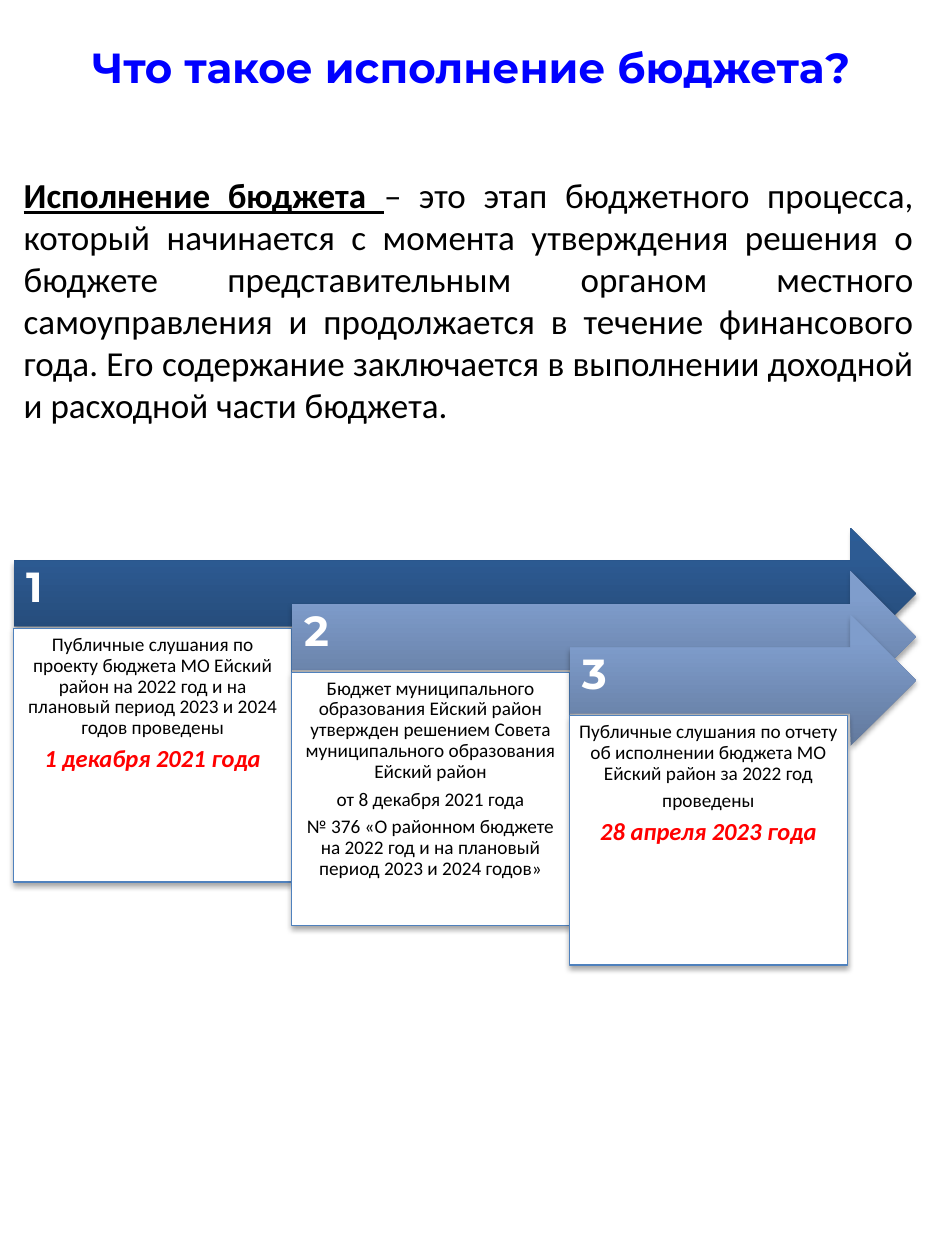
from copy import deepcopy

from pptx import Presentation
from pptx import util as u
from pptx.dml.color import RGBColor
from pptx.enum import shapes, text
from pptx.oxml import parse_xml
from pptx.oxml.ns import nsdecls, qn

HUES = {
    "title": "0000FF", "ink": "000000", "date": "FF0000",
    "white": "FFFFFF", "edge": "4F81BD",
}
DARK = ("234671", "2D5B93", "2B5C96")
PALE = ("62799D", "7F9DCC", "7E9DCE")
STEPS = [
    (DARK, 2.01, [
        ("Публичные слушания по проекту бюджета МО Ейский район на 2022 год "
         "и на плановый период 2023 и 2024 годов проведены", False),
        ("1 декабря 2021 года", True),
    ]),
    (PALE, 2.01, [
        ("Бюджет муниципального образования Ейский район утвержден решением "
         "Совета муниципального образования Ейский район", False),
        ("от 8 декабря 2021 года", False),
        ("№ 376 «О районном бюджете на 2022 год и на плановый период "
         "2023 и 2024 годов»", False),
    ]),
    (PALE, 1.98, [
        ("Публичные слушания по отчету об исполнении бюджета МО "
         "Ейский район за 2022 год", False),
        ("проведены", False),
        ("28 апреля 2023 года", True),
    ]),
]


def paint(color, hue):
    """Set a colour from a hex string."""
    color.rgb = RGBColor.from_string(hue)


def add_run(para, words, size, hue, face="Calibri", bold=False):
    """Add one styled run and return it."""
    run = para.add_run()
    run.text = words
    font = run.font
    font.name, font.size, font.bold = face, u.Pt(size), bold
    paint(font.color, hue)
    return run


def set_frame(frame, anchor, insets):
    """Set wrapping, anchor and insets (left, top, right, bottom)."""
    frame.word_wrap = True
    frame.auto_size = text.MSO_AUTO_SIZE.NONE
    frame.vertical_anchor = anchor
    (frame.margin_left, frame.margin_top,
     frame.margin_right, frame.margin_bottom) = map(u.Inches, insets)


def add_form(slide, kind, box):
    """Add a preset shape with a soft shadow below it."""
    form = slide.shapes.add_shape(kind, *map(u.Inches, box))
    form.shadow.inherit = False
    form._element.spPr.find(qn("a:effectLst")).append(parse_xml(
        f'<a:outerShdw {nsdecls("a")} blurRad="40000" dist="23000" '
        'dir="5400000" rotWithShape="0"><a:srgbClr val="000000">'
        '<a:alpha val="35000"/></a:srgbClr></a:outerShdw>'))
    return form


def shade(form, hues):
    """Fill a shape with a three-stop gradient rising from the bottom."""
    fill = form.fill
    fill.gradient()
    fill.gradient_angle = 90
    first = form._element.spPr.find(".//" + qn("a:gs"))
    first.addnext(deepcopy(first))
    for stop, hue, place in zip(fill.gradient_stops, hues, (0, 0.8, 1)):
        paint(stop.color, hue)
        stop.position = place


def add_arrow(slide, box, label, hues):
    """Draw a numbered arrow in the given box."""
    arrow = add_form(slide, shapes.MSO_SHAPE.RIGHT_ARROW, box)
    shade(arrow, hues)
    arrow.line.fill.background()
    frame = arrow.text_frame
    set_frame(frame, text.MSO_ANCHOR.MIDDLE, (0.1, 0.1, 0.28, 0.17))
    para = frame.paragraphs[0]
    para.alignment = text.PP_ALIGN.LEFT
    para.line_spacing = 0.9
    para.space_after = u.Pt(8.4)
    add_run(para, label, 24, HUES["white"], "Montserrat", True)


def add_card(slide, box, lines):
    """Draw a white card with centred lines, dates in red."""
    card = add_form(slide, shapes.MSO_SHAPE.RECTANGLE, box)
    card.fill.solid()
    paint(card.fill.fore_color, HUES["white"])
    paint(card.line.color, HUES["edge"])
    card.line.width = u.Pt(0.75)
    frame = card.text_frame
    set_frame(frame, text.MSO_ANCHOR.TOP, (0.05,) * 4)
    for i, (words, date) in enumerate(lines):
        para = frame.add_paragraph() if i else frame.paragraphs[0]
        para.alignment = text.PP_ALIGN.CENTER
        para.line_spacing = 0.9
        para.space_after = u.Pt(4)
        run = add_run(para, words, 14 if date else 11,
                      HUES["date" if date else "ink"], bold=date)
        run.font.italic = date


def add_steps(slide, box):
    """Lay out the cascade of arrows and cards inside the box."""
    left, top, width, drop = box
    pitch = 2.205
    for i, (hues, tall, lines) in enumerate(STEPS):
        x, y = left + i * pitch, top + i * drop
        add_arrow(slide, (x, y, width - i * pitch, 1.04), str(i + 1), hues)
        add_card(slide, (x, y + 0.8, pitch, tall), lines)


def add_title(slide, box):
    """Place the title in its placeholder."""
    title = slide.shapes.title
    title.left, title.top, title.width, title.height = map(u.Inches, box)
    frame = title.text_frame
    set_frame(frame, text.MSO_ANCHOR.MIDDLE, (0.1, 0.05, 0.1, 0.05))
    para = frame.paragraphs[0]
    para.alignment = text.PP_ALIGN.LEFT
    add_run(para, "Что такое исполнение бюджета?", 24, HUES["title"],
            "Montserrat", True)


def add_intro(slide, box):
    """Place the justified definition."""
    frame = slide.shapes.add_textbox(*map(u.Inches, box)).text_frame
    set_frame(frame, text.MSO_ANCHOR.TOP, (0.1, 0.05, 0.1, 0.05))
    para = frame.paragraphs[0]
    para.alignment = text.PP_ALIGN.JUSTIFY
    term = add_run(para, "Исполнение бюджета ", 20, HUES["ink"], bold=True)
    term.font.underline = True
    add_run(para, "– это этап бюджетного процесса, который начинается с "
            "момента утверждения решения о бюджете представительным органом "
            "местного самоуправления и продолжается в течение финансового "
            "года. Его содержание заключается в выполнении доходной и "
            "расходной части бюджета.", 20, HUES["ink"])


def main():
    """Build and save the slide."""
    deck = Presentation()
    deck.slide_width, deck.slide_height = u.Inches(7.5), u.Inches(10)
    slide = deck.slides.add_slide(deck.slide_layouts[5])
    add_steps(slide, (0.11, 4.19, 7.16, 0.345))
    add_intro(slide, (0.09, 1.33, 7.26, 2.12))
    add_title(slide, (0.63, 0.28, 6.5, 0.5))
    deck.save("out.pptx")


if __name__ == "__main__":
    main()
